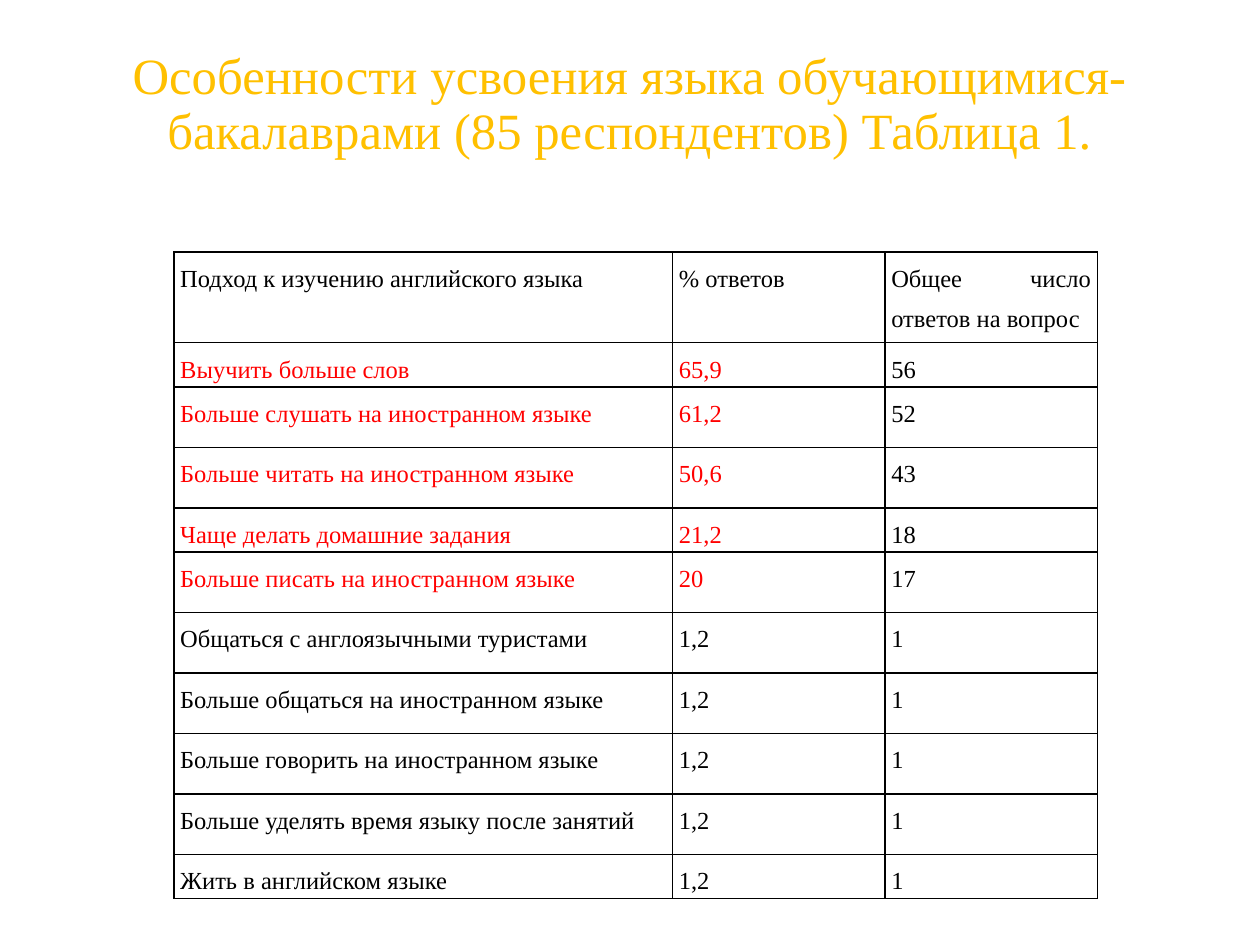
from lxml import etree
from pptx import Presentation
from pptx import util as u
from pptx.dml import color
from pptx.enum import text
from pptx.oxml import ns

COLORS = {"title": "FFC000", "accent": "FF0000", "body": "000000", "border": "000000"}
FONT = "Times New Roman"
SLIDE_WIDTH, SLIDE_HEIGHT = u.Inches(10), u.Inches(7.5)
ROW_UNIT = u.Inches(0.24)
COLUMN_SHARES = (0.54, 0.23, 0.23)
ROW_UNITS = (3, 1, 2, 2, 1, 2, 2, 2, 2, 2, 1)
ACCENT_ROWS = range(1, 6)

TITLE = "Особенности усвоения языка обучающимися-бакалаврами (85 респондентов) Таблица 1."
ROWS = (
    ("Подход к изучению английского языка", "% ответов", "Общее число ответов на вопрос"),
    ("Выучить больше слов", "65,9", "56"),
    ("Больше слушать на иностранном языке", "61,2", "52"),
    ("Больше читать на иностранном языке", "50,6", "43"),
    ("Чаще делать домашние задания", "21,2", "18"),
    ("Больше писать на иностранном языке", "20", "17"),
    ("Общаться с англоязычными туристами", "1,2", "1"),
    ("Больше общаться на иностранном языке", "1,2", "1"),
    ("Больше говорить на иностранном языке", "1,2", "1"),
    ("Больше уделять время языку после занятий", "1,2", "1"),
    ("Жить в английском языке", "1,2", "1"),
)

TITLE_FRAME = {"word_wrap": True, "vertical_anchor": text.MSO_ANCHOR.TOP, "margin_top": 0}
TITLE_PARAGRAPH = {"alignment": text.PP_ALIGN.CENTER, "line_spacing": 0.9}
CELL_FORMAT = {
    "margin_left": u.Inches(0.05),
    "margin_right": u.Inches(0.05),
    "margin_top": 0,
    "margin_bottom": 0,
    "vertical_anchor": text.MSO_ANCHOR.TOP,
}
CELL_PARAGRAPH = {
    "alignment": text.PP_ALIGN.JUSTIFY,
    "line_spacing": 1.5,
    "space_after": u.Pt(8),
}
TABLE_FORMAT = {"first_row": False, "horz_banding": False}


def apply_format(target, values):
    for name, value in values.items():
        setattr(target, name, value)


def write_text(paragraph, wording, size, color_name, paragraph_format):
    apply_format(paragraph, paragraph_format)
    run = paragraph.add_run()
    run.text = wording
    apply_format(run.font, {"name": FONT, "size": u.Pt(size), "bold": False})
    run.font.color.rgb = color.RGBColor.from_string(COLORS[color_name])


def draw_borders(cell):
    properties = cell._tc.get_or_add_tcPr()
    for position, side in enumerate(("lnL", "lnR", "lnT", "lnB")):
        line = etree.Element(ns.qn(f"a:{side}"), w=str(u.Pt(1)))
        fill = etree.SubElement(line, ns.qn("a:solidFill"))
        etree.SubElement(fill, ns.qn("a:srgbClr"), val=COLORS["border"])
        properties.insert(position, line)


def add_title(slide, left, top, width, height):
    frame = slide.shapes.add_textbox(left, top, width, height).text_frame
    apply_format(frame, TITLE_FRAME)
    write_text(frame.paragraphs[0], TITLE, 29, "title", TITLE_PARAGRAPH)


def add_answers_table(slide, left, top, width):
    height = ROW_UNIT * sum(ROW_UNITS)
    table = slide.shapes.add_table(
        len(ROWS), len(COLUMN_SHARES), left, top, width, height
    ).table
    apply_format(table, TABLE_FORMAT)
    for column, share in zip(table.columns, COLUMN_SHARES):
        column.width = int(width * share)
    for row_index, (row, units, wordings) in enumerate(zip(table.rows, ROW_UNITS, ROWS)):
        row.height = ROW_UNIT * units
        for column_index, (cell, wording) in enumerate(zip(row.cells, wordings)):
            accented = row_index in ACCENT_ROWS and column_index < 2
            apply_format(cell, CELL_FORMAT)
            cell.fill.background()
            draw_borders(cell)
            write_text(
                cell.text_frame.paragraphs[0],
                wording,
                14,
                "accent" if accented else "body",
                CELL_PARAGRAPH,
            )


def main():
    presentation = Presentation()
    apply_format(presentation, {"slide_width": SLIDE_WIDTH, "slide_height": SLIDE_HEIGHT})
    slide = presentation.slides.add_slide(presentation.slide_layouts[6])
    title_left, title_top = u.Inches(0.69), u.Inches(0.4)
    add_title(slide, title_left, title_top, SLIDE_WIDTH - 2 * title_left, u.Inches(1.45))
    add_answers_table(slide, u.Inches(1.38), u.Inches(2), u.Inches(7.33))
    presentation.save("out.pptx")


if __name__ == "__main__":
    main()
